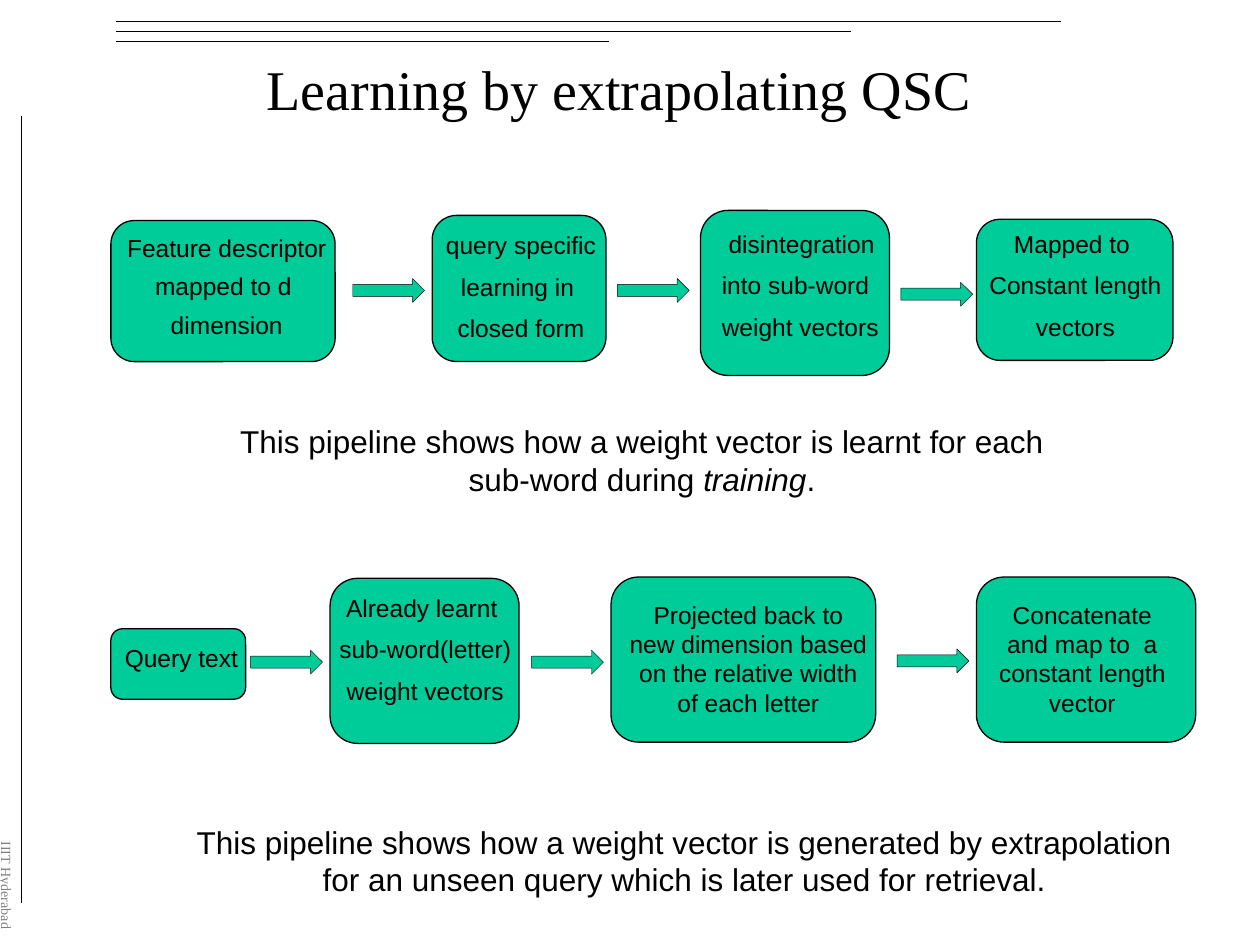
import pptx
import pptx.dml.color
import pptx.enum.shapes
import pptx.enum.text
import pptx.oxml
import pptx.util

PX = 9144  # EMU, 100 px to the inch
COLORS = {"ink": "000000", "box": "00CC99", "footer": "808080"}
SHAPES = pptx.enum.shapes.MSO_SHAPE
CENTER = pptx.enum.text.PP_ALIGN.CENTER
LEFT = pptx.enum.text.PP_ALIGN.LEFT


def rgb(name):
    return pptx.dml.color.RGBColor.from_string(COLORS[name])


def write(tf, lines, size, font="Arial", color="ink", align=CENTER, spacing=None):
    """Fill a text frame; each line is a list of (text, italic) runs."""
    tf.word_wrap = True
    for i, runs in enumerate(lines):
        p = tf.add_paragraph() if i else tf.paragraphs[0]
        p.alignment = align
        if spacing:
            p.line_spacing = spacing
        if i:
            p.space_before = pptx.util.Pt(12)
        for text, italic in runs:
            r = p.add_run()
            r.text = text
            r.font.size = pptx.util.Pt(size)
            r.font.name = font
            r.font.italic = italic
            r.font.color.rgb = rgb(color)


prs = pptx.Presentation()
prs.slide_width, prs.slide_height = 1000 * PX, 750 * PX
s = prs.slides.add_slide(prs.slide_layouts[5])

# Decorative rules along the top and left edges
rules = [(92, 17, 842, 17), (92, 25, 675, 25), (92, 33, 483, 33), (17, 92, 17, 717)]
for rule in rules:
    line = s.shapes.add_connector(
        pptx.enum.shapes.MSO_CONNECTOR.STRAIGHT, *[v * PX for v in rule])
    line.line.color.rgb = rgb("ink")
    line.line.width = pptx.util.Pt(0.75)
    line._element.spPr.append(pptx.oxml.parse_xml(
        '<a:effectLst xmlns:a="http://schemas.openxmlformats.org/drawingml/2006/main"/>'))

# Vertical institute name
sp = s.shapes.add_textbox(-16 * PX, 658 * PX, 33 * PX, 92 * PX)
sp.text_frame._txBody.bodyPr.set("vert", "eaVert")
write(sp.text_frame, [[("IIIT Hyderabad", False)]], 8, "Times New Roman", "footer", LEFT)

# Title
title = s.shapes.title
title.left, title.top, title.width, title.height = 67 * PX, 8 * PX, 849 * PX, 124 * PX
title.text_frame.vertical_anchor = pptx.enum.text.MSO_ANCHOR.MIDDLE
write(title.text_frame, [[("Learning by extrapolating QSC", False)]], 32, "Times New Roman")

# Pipeline steps: box, label area, lines, alignment, line spacing
steps = [
    # training
    ((88, 175, 178, 112), (75, 188, 210, 88),
     [" Feature descriptor ", "mapped to d ", "dimension"], CENTER, 0.6),
    ((343, 171, 138, 116), (338, 184, 151, 94),
     [" query specific ", "learning in ", "closed form"], CENTER, 0.7),
    ((556, 167, 150, 131), (563, 183, 161, 94),
     [" disintegration", "into sub-word", "weight vectors"], LEFT, 0.7),
    ((775, 174, 156, 112), (771, 183, 165, 94),
     ["Mapped to ", "Constant length", "vectors"], CENTER, 0.7),
    # retrieval
    ((88, 499, 107, 56), (55, 512, 178, 28), ["Query text"], CENTER, 0.7),
    ((262, 459, 150, 131), (257, 472, 161, 94),
     ["Already learnt ", "sub-word(letter) ", "weight vectors"], CENTER, 0.7),
    ((485, 458, 210, 131), (489, 471, 210, 104),
     ["Projected back to new dimension based on the relative width of each letter"],
     CENTER, None),
    ((775, 458, 174, 131), (779, 471, 160, 104),
     ["Concatenate and map to  a constant length vector"], CENTER, None),
]
arrows = [(280, 221), (490, 221), (715, 224), (199, 516), (422, 516), (712, 515)]

blocks = [(SHAPES.ROUNDED_RECTANGLE, step[0], 0.75) for step in steps]
blocks += [(SHAPES.RIGHT_ARROW, (x, y, 57, 19), 0.25) for x, y in arrows]
for kind, place, width in blocks:
    sp = s.shapes.add_shape(kind, *[v * PX for v in place])
    sp.shadow.inherit = False
    sp.fill.solid()
    sp.fill.fore_color.rgb = rgb("box")
    sp.line.color.rgb = rgb("ink")
    sp.line.width = pptx.util.Pt(width)

for box, place, lines, align, spacing in steps:
    sp = s.shapes.add_textbox(*[v * PX for v in place])
    write(sp.text_frame, [[(text, False)] for text in lines], 14,
          align=align, spacing=spacing)

# Captions under each pipeline
captions = [
    ((155, 330, 709, 71),
     [("This pipeline shows how a weight vector is learnt for each sub-word during ", False),
      ("training", True), (".", False)]),
    ((142, 648, 802, 71),
     [("This pipeline shows how a weight vector is generated by extrapolation "
       "for an unseen query which is later used for retrieval.", False)]),
]
for place, runs in captions:
    sp = s.shapes.add_textbox(*[v * PX for v in place])
    write(sp.text_frame, [runs], 18)

prs.save("out.pptx")
